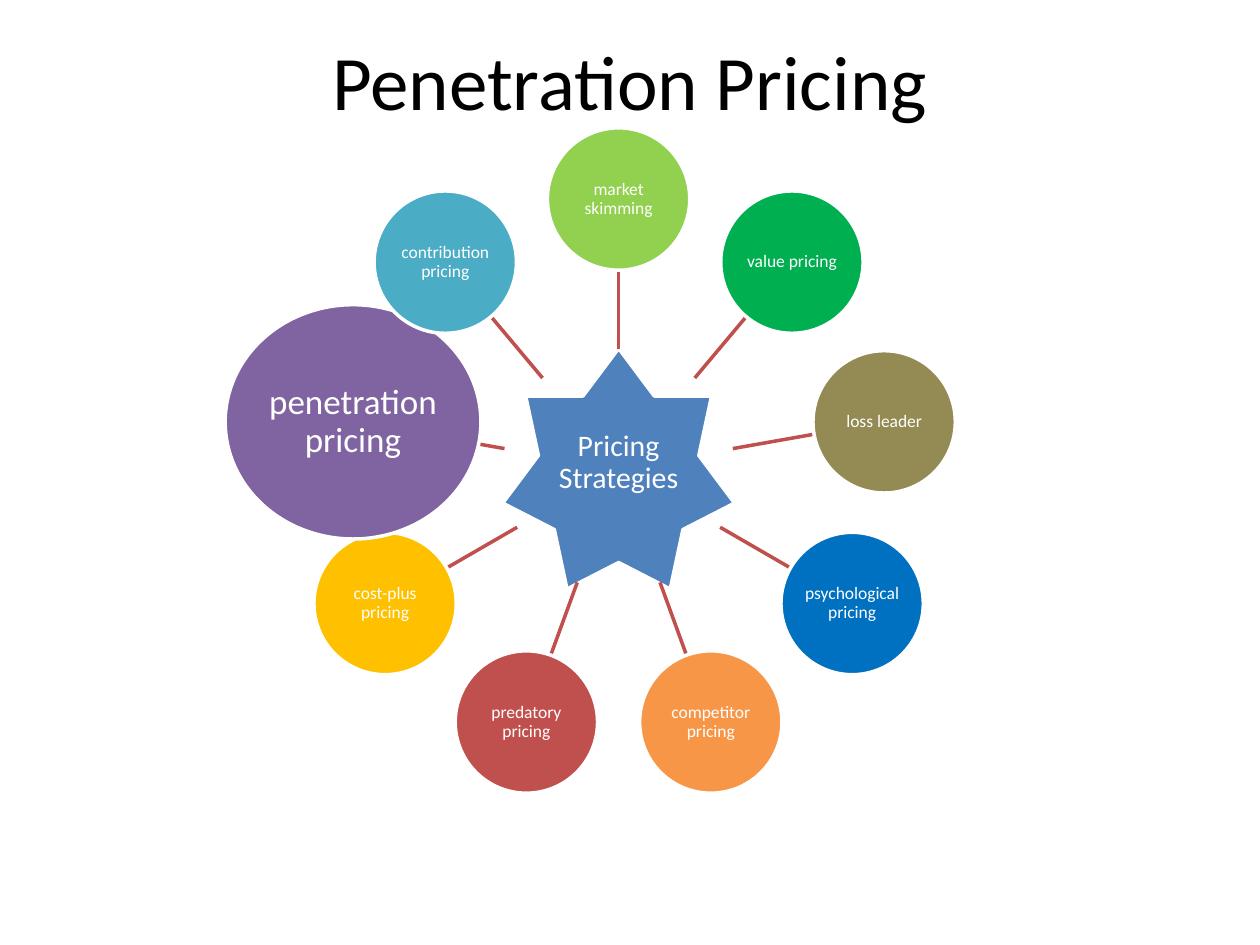
from math import cos, radians, sin

from lxml.etree import SubElement
from pptx import Presentation
from pptx.dml.color import RGBColor
from pptx.enum.shapes import MSO_CONNECTOR as Connector, MSO_SHAPE as Preset
from pptx.enum.text import MSO_ANCHOR as Anchor, PP_ALIGN as Align
from pptx.oxml.ns import qn
from pptx.util import Inches, Pt

rgb = RGBColor.from_string


def write(shape, text, size, color="FFFFFF", spacing=0.9, after=0.35, inset=0.01):
    frame = shape.text_frame
    frame.word_wrap = True
    frame.vertical_anchor = Anchor.MIDDLE
    frame.margin_left = frame.margin_right = Inches(inset)
    frame.margin_top = frame.margin_bottom = Inches(inset)
    frame.text = text
    paragraph = frame.paragraphs[0]
    paragraph.alignment = Align.CENTER
    paragraph.line_spacing = spacing
    paragraph.space_after = Pt(size * after)
    font = paragraph.runs[0].font
    font.name = "Calibri"
    font.size = Pt(size)
    font.color.rgb = rgb(color)


def add_node(preset, x, y, width, height, fill, text, size):
    """Add a labelled shape centred on x, y, in units."""
    node = slide.shapes.add_shape(
        preset, int((x - width / 2) * unit), int((y - height / 2) * unit),
        int(width * unit), int(height * unit))
    node.shadow.inherit = False
    node.fill.solid()
    node.fill.fore_color.rgb = rgb(fill)
    node.line.color.rgb = rgb("FFFFFF")
    node.line.width = Pt(2)
    write(node, text, size)


prs = Presentation()
prs.slide_width, prs.slide_height = Inches(10), Inches(7.5)
unit = prs.slide_width / 100  # one percent of the slide's width
slide = prs.slides.add_slide(prs.slide_layouts[5])

title = slide.shapes.title
title.left, title.top = int(7.5 * unit), int(2.1 * unit)
title.width, title.height = int(85 * unit), int(8.4 * unit)
write(title, "Penetration Pricing", 44, color="000000", spacing=1, after=0, inset=0.05)

hub_x, hub_y, ring = 49.1, 37.2, 21.4
add_node(Preset.STAR_7_POINT, hub_x, hub_y, 18.4, 19.1, "4F81BD", "Pricing Strategies", 17)

# label, fill, spoke start, spoke end, width, height, text size
small = (15.8, 11.3, 11.3, 10)
strategies = [
    ("market skimming", "92D050", 9.5, *small),
    ("value pricing", "00B050", 9.4, *small),
    ("loss leader", "948A54", 9.2, *small),
    ("psychological pricing", "0070C0", 9.3, *small),
    ("competitor pricing", "F79646", 9.6, *small),
    ("predatory pricing", "C0504D", 9.6, *small),
    ("cost-plus pricing", "FFC000", 9.3, *small),
    ("penetration pricing", "8064A2", 9.2, 11.3, 20.3, 18.6, 20),
    ("contribution pricing", "4BACC6", 9.4, *small),
]
for i, (label, fill, start, end, width, height, size) in enumerate(strategies):
    angle = radians(360 / len(strategies) * i - 90)
    dx, dy = cos(angle), sin(angle)
    spoke = slide.shapes.add_connector(
        Connector.STRAIGHT,
        int((hub_x + start * dx) * unit), int((hub_y + start * dy) * unit),
        int((hub_x + end * dx) * unit), int((hub_y + end * dy) * unit))
    spoke.line.color.rgb = rgb("C0504D")
    spoke.line.width = Pt(2)
    SubElement(spoke._element.spPr, qn("a:effectLst"))
    add_node(Preset.OVAL, hub_x + ring * dx, hub_y + ring * dy,
             width, height, fill, label, size)

prs.save("out.pptx")
